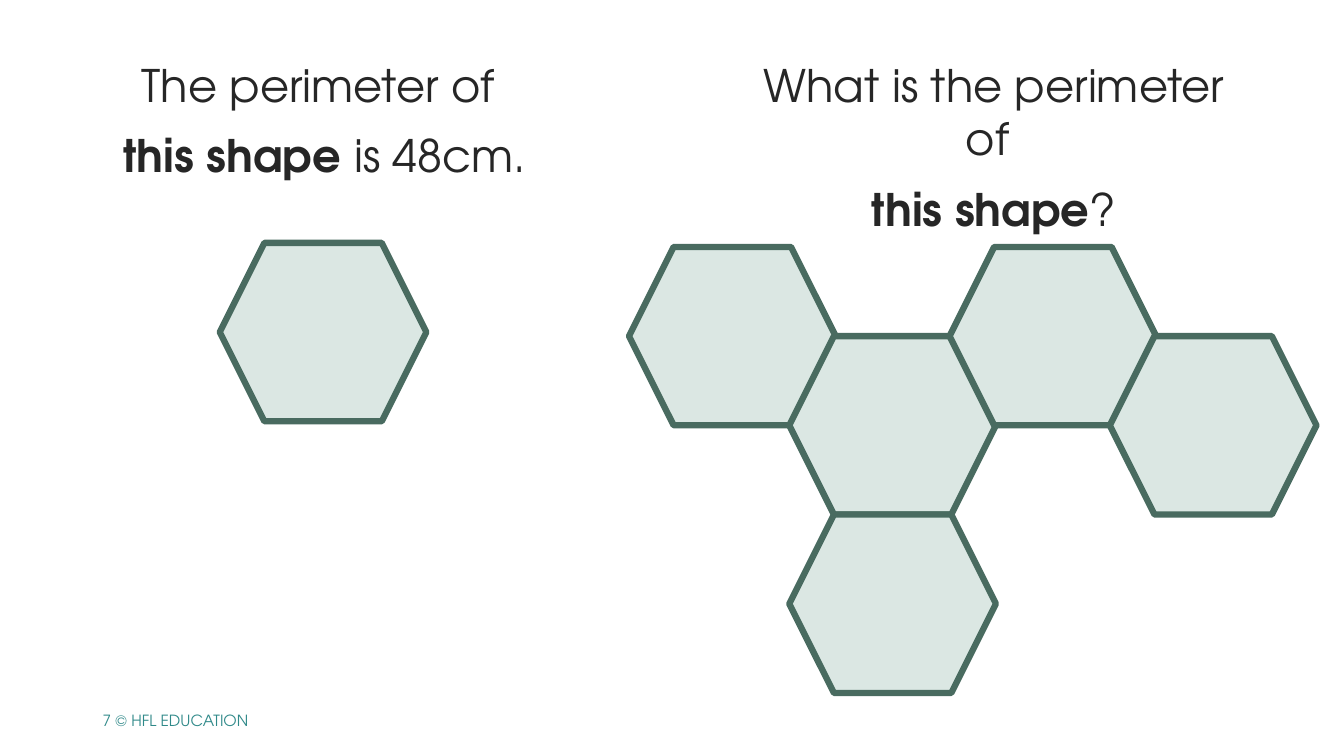
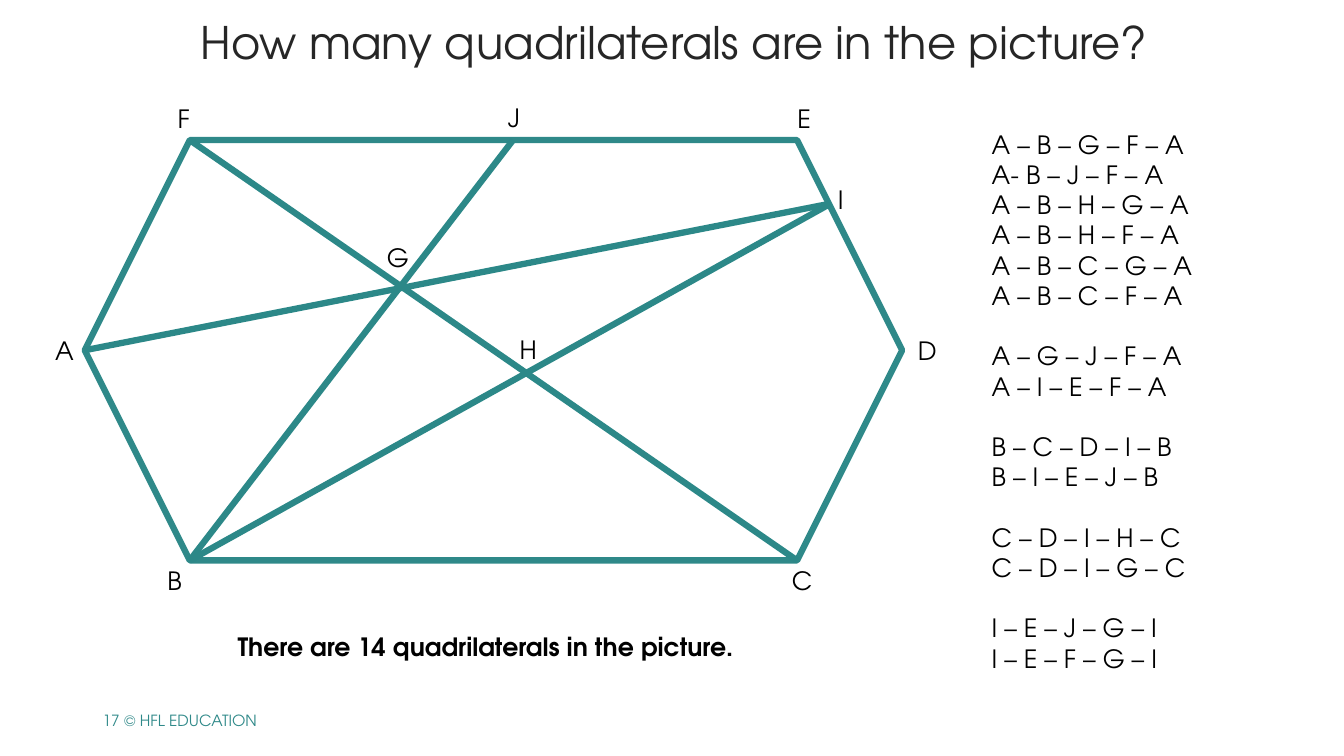
from lxml import etree
from pptx import Presentation
from pptx.dml.color import RGBColor
from pptx.enum.shapes import MSO_CONNECTOR, MSO_SHAPE
from pptx.enum.text import MSO_ANCHOR, PP_ALIGN
from pptx.oxml.ns import qn
from pptx.util import Emu, Pt

HEXAGON = MSO_SHAPE.HEXAGON
LINE = MSO_CONNECTOR.STRAIGHT
LEFT, CENTER = PP_ALIGN.LEFT, PP_ALIGN.CENTER
TOP, MIDDLE = MSO_ANCHOR.TOP, MSO_ANCHOR.MIDDLE

FONT = "TeX Gyre Adventor"
TEAL, RAY, GREEN, PALE = "2F8989", "2C8888", "496B60", "DBE7E3"
INK, BLACK = "262626", "000000"
CELL = 91440
COLS, ROWS = 133.33, 75
STROKE = Pt(4.5)

TILE = (20.5, 17.7)
TILES = [(0, 0), (1, 1), (1, 3), (2, 0), (3, 1)]
PATHS = [
    ["A – B – G – F – A", "A- B – J – F – A", "A – B – H – G – A",
     "A – B – H – F – A", "A – B – C – G – A", "A – B – C – F – A"],
    ["A – G – J – F – A", "A – I – E – F – A"],
    ["B – C – D – I – B", "B – I – E – J – B"],
    ["C – D – I – H – C", "C – D – I – G – C"],
    ["I – E – J – G – I", "I – E – F – G – I"],
]


def grid(*cells):
    """Turn counts of grid cells into slide lengths."""
    return [Emu(round(n * CELL)) for n in cells]


def color(code):
    """Turn a hex string into a colour."""
    return RGBColor.from_string(code)


def text(slide, box, paras, size, ink=BLACK, bold=None, align=LEFT,
         anchor=TOP, after=0, before=()):
    """Add a text box; a paragraph is a list of (words, bold) or a string."""
    frame = slide.shapes.add_textbox(*grid(*box)).text_frame
    frame.word_wrap = True
    frame.vertical_anchor = anchor
    for i, runs in enumerate(paras):
        para = frame.paragraphs[0] if i == 0 else frame.add_paragraph()
        para.alignment = align
        para.space_after = Pt(after)
        if i in before:
            para.space_before = Pt(size * 1.2)
        font = para.font
        font.name, font.size, font.bold = FONT, Pt(size), bold
        font.color.rgb = color(ink)
        for words, heavy in [(runs, None)] if isinstance(runs, str) else runs:
            run = para.add_run()
            run.text = words
            run.font.bold = heavy


def title(slide, box, paras):
    """Add a large centred heading."""
    text(slide, box, paras, 32, INK, align=CENTER, after=12)


def hexagon(slide, box, line, fill=None):
    """Add an outlined hexagon."""
    shape = slide.shapes.add_shape(HEXAGON, *grid(*box))
    shape.shadow.inherit = False
    shape.line.color.rgb = color(line)
    shape.line.width = STROKE
    if fill:
        shape.fill.solid()
        shape.fill.fore_color.rgb = color(fill)
    else:
        shape.fill.background()


def ray(slide, start, end):
    """Add a straight line between two points."""
    line = slide.shapes.add_connector(LINE, *grid(*start, *end))
    line.line.color.rgb = color(RAY)
    line.line.width = STROKE
    etree.SubElement(line._element.spPr, qn("a:effectLst"))


def label(slide, point, shift, name):
    """Name a point with a letter centred at a shift from it."""
    x, y = point[0] + shift[0], point[1] + shift[1]
    text(slide, (x - 2, y - 2, 4, 4), [name], 18, align=CENTER)


def page(deck, number):
    """Add a blank slide with its footer."""
    slide = deck.slides.add_slide(deck.slide_layouts[6])
    text(slide, (9.2, 69.5, 27.5, 4), [f"{number} © HFL EDUCATION"], 11,
         TEAL, anchor=MIDDLE)
    return slide


def tiles(deck):
    """Build the perimeter slide."""
    slide = page(deck, 7)
    title(slide, (8.8, 5.2, 46.8, 16.5),
          ["The perimeter of ", [("this shape ", True), ("is 48cm.", False)]])
    title(slide, (72.6, 5.2, 52, 16.5),
          ["What is the perimeter of ", [("this shape", True), ("?", False)]])
    hexagon(slide, (21.8, 24.1, *TILE), GREEN, PALE)
    for col, row in TILES:
        place = (62.4 + col * 15.9, 24.5 + row * TILE[1] / 2)
        hexagon(slide, (*place, *TILE), GREEN, PALE)


def puzzle(deck):
    """Build the quadrilaterals slide."""
    slide = page(deck, 17)
    title(slide, (17.7, 1, 98.4, 6.4),
          ["How many quadrilaterals are in the picture?"])
    text(slide, (22.6, 62.1, 66.7, 4),
         ["There are 14 quadrilaterals in the picture."], 18, bold=True)

    left, top, wide, tall = 8.4, 13.9, 81.1, 41.7
    right, low, mid, cut = left + wide, top + tall, top + tall / 2, tall / 4
    points = {
        "A": (left, mid), "B": (left + cut, low), "C": (right - cut, low),
        "D": (right, mid), "E": (right - cut, top), "F": (left + cut, top),
        "G": (39.8, 28.5), "H": (52.2, 37), "I": (82.4, 20.2),
        "J": (50.9, top),
    }
    shifts = {
        "A": (-2, 0), "B": (-1.5, 2), "C": (0.5, 2), "D": (2.5, 0),
        "E": (0.7, -2.1), "F": (-0.6, -2.1), "G": (-0.4, -2.9),
        "H": (0.2, -2.3), "I": (1, -0.4), "J": (0.1, -2.2),
    }
    hexagon(slide, (left, top, wide, tall), TEAL)
    for start, end in ("FC", "BJ", "AI", "BI"):
        ray(slide, points[start], points[end])
    for name, point in points.items():
        label(slide, point, shifts[name], name)

    lines, gaps = [], []
    for group in PATHS:
        if lines:
            gaps.append(len(lines))
        lines += group
    text(slide, (97.4, 12.3, 22.9, 58.6), lines, 18, before=gaps)


def main():
    """Build and save the deck."""
    deck = Presentation()
    deck.slide_width, deck.slide_height = grid(COLS, ROWS)
    tiles(deck)
    puzzle(deck)
    deck.save("out.pptx")


if __name__ == "__main__":
    main()
